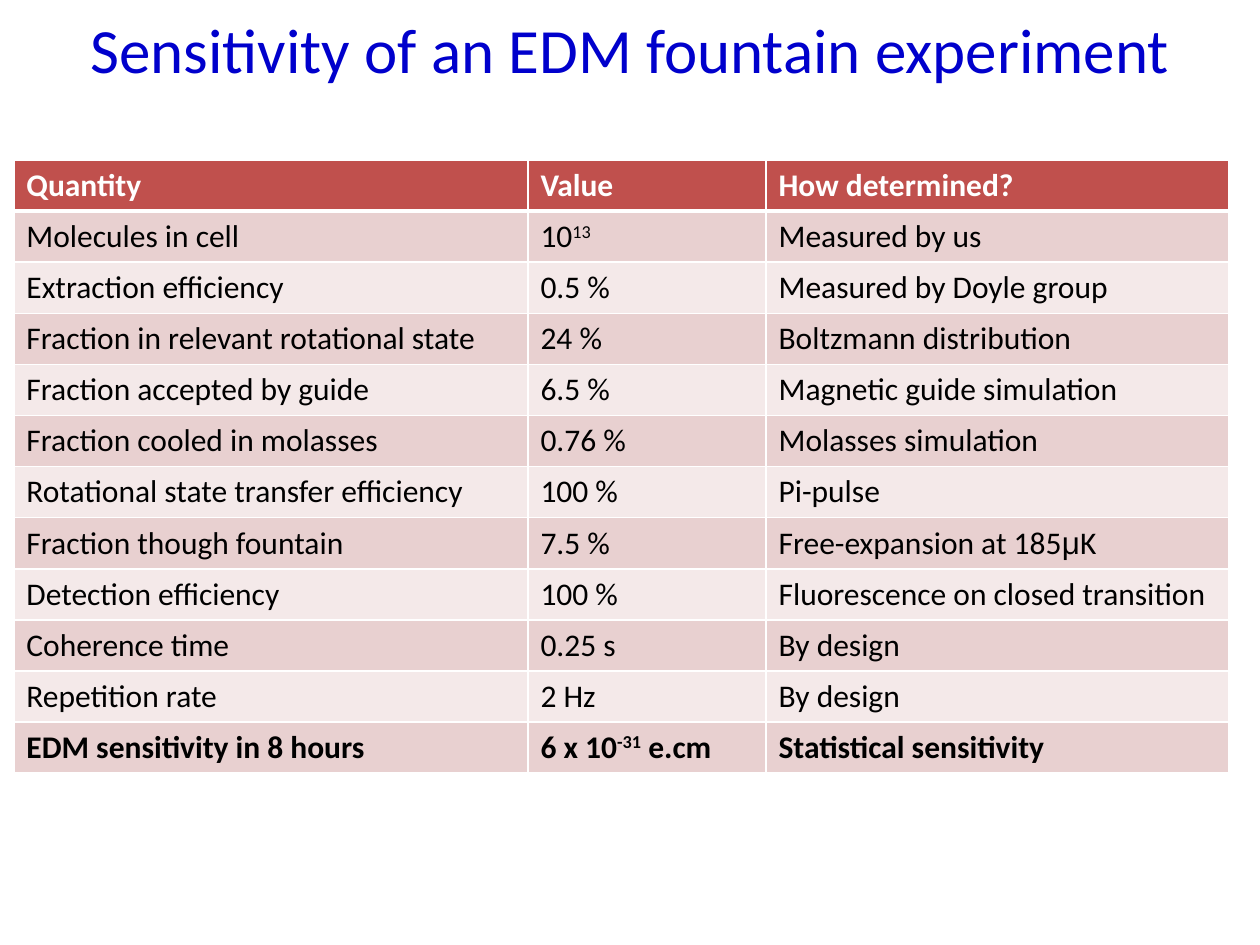
from lxml import etree
from pptx import Presentation
from pptx.dml.color import RGBColor
from pptx.enum.text import MSO_ANCHOR, PP_ALIGN
from pptx.oxml.ns import qn
from pptx.util import Inches, Pt

MIDDLE = MSO_ANCHOR.MIDDLE
CENTER = PP_ALIGN.CENTER
TITLE_ONLY = 5

COLORS = {
    "title": "0000CC",
    "header": "C0504D",
    "odd_row": "E8D0D0",
    "even_row": "F4E9E9",
    "white": "FFFFFF",
    "text": "000000",
}
SUPERSCRIPT = {"baseline": 30000}
GREEK = {"font": "Arial"}

COLUMN_WIDTHS = (4.08, 1.89, 3.67)
QUANTITIES = [
    ("Quantity", "Value", "How determined?"),
    ("Molecules in cell", ["10", ("13", SUPERSCRIPT)], "Measured by us"),
    ("Extraction efficiency", "0.5 %", "Measured by Doyle group"),
    ("Fraction in relevant rotational state", "24 %", "Boltzmann distribution"),
    ("Fraction accepted by guide", "6.5 %", "Magnetic guide simulation"),
    ("Fraction cooled in molasses", "0.76 %", "Molasses simulation"),
    ("Rotational state transfer efficiency", "100 %", "Pi-pulse"),
    ("Fraction though fountain", "7.5 %",
     ["Free-expansion at 185", ("μ", GREEK), "K"]),
    ("Detection efficiency", "100 %", "Fluorescence on closed transition"),
    ("Coherence time", "0.25 s", "By design"),
    ("Repetition rate", "2 Hz", "By design"),
    ("EDM sensitivity in 8 hours",
     ["6 x 10", ("-31", SUPERSCRIPT), " e.cm"], "Statistical sensitivity"),
]


class SlideBuilder:
    """Holds the style and the current slide, and adds its elements."""

    font = "Calibri"
    title_size = 36
    table_size = 18

    def __init__(self, slide):
        self.slide = slide

    def add_run(self, paragraph, text, size, color, bold=False, font=None, baseline=None):
        run = paragraph.add_run()
        run.text = text
        run.font.name = font or self.font
        run.font.size = Pt(size)
        run.font.bold = bold
        run.font.color.rgb = RGBColor.from_string(COLORS[color])
        if baseline:
            run.font._element.set("baseline", str(baseline))

    def add_title(self, text, left, top, width, height):
        title = self.slide.shapes.title
        title.left, title.top = Inches(left), Inches(top)
        title.width, title.height = Inches(width), Inches(height)
        title.text_frame.vertical_anchor = MIDDLE
        paragraph = title.text_frame.paragraphs[0]
        paragraph.alignment = CENTER
        self.add_run(paragraph, text, self.title_size, "title")

    def set_borders(self, cell, top=1, bottom=1):
        properties = cell._tc.get_or_add_tcPr()
        for side, width in (("L", 1), ("R", 1), ("T", top), ("B", bottom)):
            line = etree.SubElement(properties, qn(f"a:ln{side}"), w=str(Pt(width)))
            fill = etree.SubElement(line, qn("a:solidFill"))
            etree.SubElement(fill, qn("a:srgbClr"), val=COLORS["white"])

    def fill_cell(self, cell, content, fill, color, bold):
        cell.fill.solid()
        cell.fill.fore_color.rgb = RGBColor.from_string(COLORS[fill])
        paragraph = cell.text_frame.paragraphs[0]
        for part in [content] if isinstance(content, str) else content:
            text, style = (part, {}) if isinstance(part, str) else part
            self.add_run(paragraph, text, self.table_size, color, bold, **style)

    def add_table(self, rows, widths, left, top, height):
        table = self.slide.shapes.add_table(
            len(rows), len(widths), Inches(left), Inches(top),
            Inches(sum(widths)), Inches(height)).table
        for column, width in zip(table.columns, widths):
            column.width = Inches(width)
        last = len(rows) - 1
        for index, contents in enumerate(rows):
            is_header = index == 0
            band = "odd_row" if index % 2 else "even_row"
            for cell, content in zip(table.rows[index].cells, contents):
                self.set_borders(cell, top=3 if index == 1 else 1,
                                 bottom=3 if is_header else 1)
                self.fill_cell(cell, content,
                               fill="header" if is_header else band,
                               color="white" if is_header else "text",
                               bold=index in (0, last))


def main():
    presentation = Presentation()
    presentation.slide_width = Inches(10)
    presentation.slide_height = Inches(7.5)
    slide = presentation.slides.add_slide(presentation.slide_layouts[TITLE_ONLY])
    builder = SlideBuilder(slide)
    builder.add_title("Sensitivity of an EDM fountain experiment", 0, 0.05, 10, 0.66)
    builder.add_table(QUANTITIES, COLUMN_WIDTHS, left=0.11, top=1.27, height=4.87)
    presentation.save("out.pptx")


if __name__ == "__main__":
    main()
